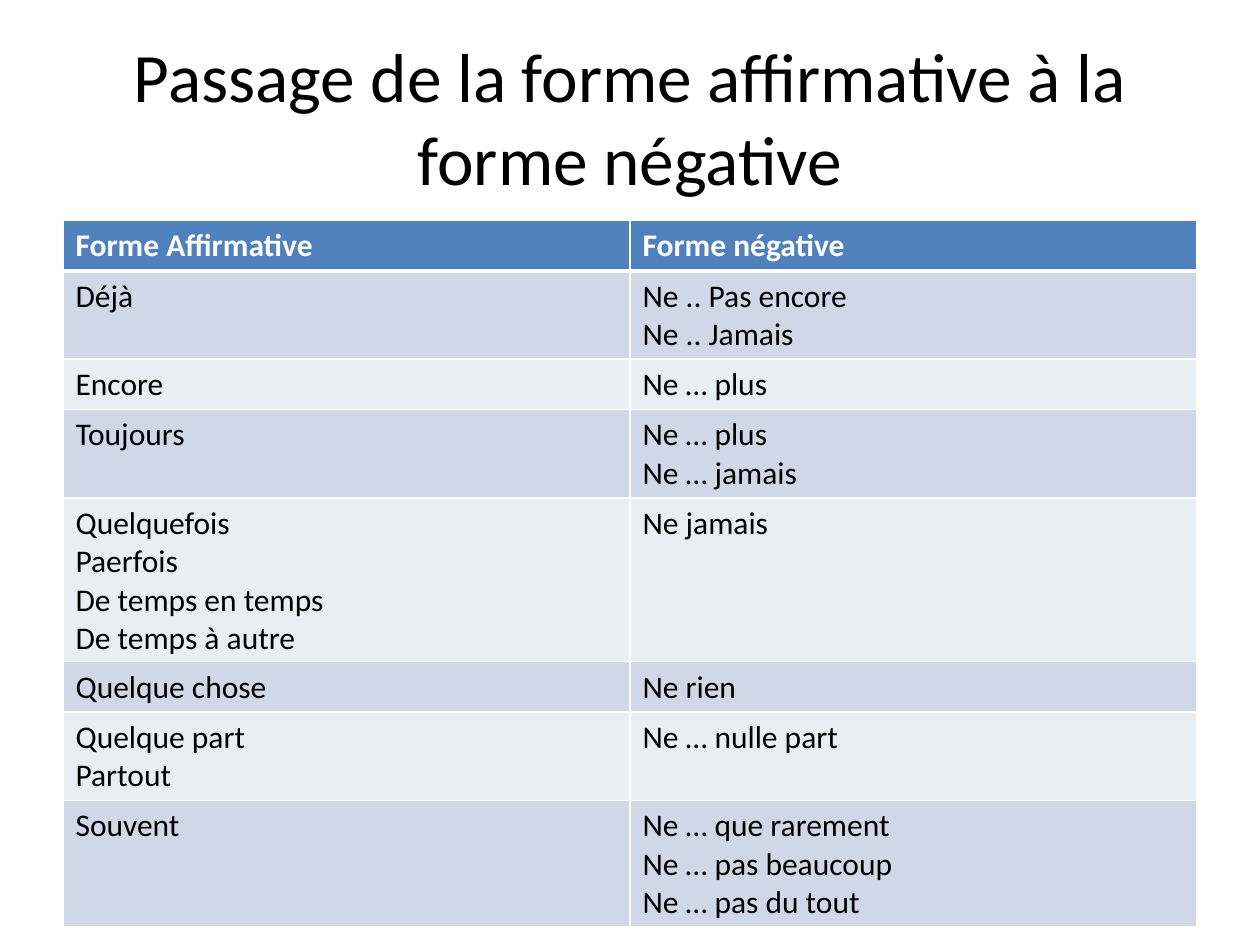
import dataclasses

import lxml.etree
import pptx
import pptx.dml.color
import pptx.enum.text
import pptx.oxml.ns
import pptx.util

PIXEL = 9144
ROWS = [
    (["Forme Affirmative"], ["Forme négative"]),
    (["Déjà"], ["Ne .. Pas encore", "Ne .. Jamais"]),
    (["Encore"], ["Ne … plus"]),
    (["Toujours"], ["Ne … plus", "Ne … jamais"]),
    (["Quelquefois", "Paerfois", "De temps en temps", "De temps à autre"], ["Ne jamais"]),
    (["Quelque chose"], ["Ne rien"]),
    (["Quelque part", "Partout"], ["Ne … nulle part"]),
    (["Souvent"], ["Ne … que rarement", "Ne … pas beaucoup", "Ne … pas du tout"]),
]


@dataclasses.dataclass(frozen=True)
class Theme:
    """Colours, type sizes and line widths of the deck."""

    font: str = "Calibri"
    title_size: float = 39.6
    table_size: float = 18
    ink: str = "000000"
    white: str = "FFFFFF"
    header: str = "4F81BD"
    bands: tuple = ("E9EDF4", "D0D8E8")
    thin_line: int = 1
    thick_line: int = 3


THEME = Theme()


def scale(*lengths):
    """Turn pixel lengths into EMU."""
    return [pptx.util.Emu(length * PIXEL) for length in lengths]


def write(frame, lines, *, size, color=THEME.ink, bold=False, align=pptx.enum.text.PP_ALIGN.LEFT):
    """Write each line as one formatted paragraph of a text frame."""
    for index, line in enumerate(lines):
        para = frame.add_paragraph() if index else frame.paragraphs[0]
        para.alignment = align
        span = para.add_run()
        span.text = line
        span.font.name = THEME.font
        span.font.size = pptx.util.Pt(size)
        span.font.bold = bold
        span.font.color.rgb = pptx.dml.color.RGBColor.from_string(color)


def draw_borders(cell, top, bottom):
    """Give a cell white borders, with its own top and bottom widths."""
    properties = cell._tc.get_or_add_tcPr()
    widths = {"L": THEME.thin_line, "R": THEME.thin_line, "T": top, "B": bottom}
    for position, (side, width) in enumerate(widths.items()):
        line = lxml.etree.Element(pptx.oxml.ns.qn(f"a:ln{side}"), w=str(pptx.util.Pt(width)))
        fill = lxml.etree.SubElement(line, pptx.oxml.ns.qn("a:solidFill"))
        lxml.etree.SubElement(fill, pptx.oxml.ns.qn("a:srgbClr"), val=THEME.white)
        properties.insert(position, line)


def add_title(page, left, top, width, height):
    """Place the centred slide title in the given box."""
    box = page.shapes.add_textbox(*scale(left, top, width, height))
    box.text_frame.word_wrap = True
    box.text_frame.vertical_anchor = pptx.enum.text.MSO_ANCHOR.MIDDLE
    write(
        box.text_frame,
        ["Passage de la forme affirmative à la forme négative"],
        size=THEME.title_size,
        align=pptx.enum.text.PP_ALIGN.CENTER,
    )


def add_forms_table(page, left, top, width, line_height, padding):
    """Place the table of forms, each row as tall as its longest cell."""
    heights = [line_height * max(map(len, row)) + padding for row in ROWS]
    area = scale(left, top, width, sum(heights))
    table = page.shapes.add_table(len(ROWS), len(ROWS[0]), *area).table
    for row_index, (row, height) in enumerate(zip(ROWS, heights)):
        is_header = row_index == 0
        table.rows[row_index].height = scale(height)[0]
        fill = THEME.header if is_header else THEME.bands[row_index % 2]
        above = THEME.thick_line if row_index == 1 else THEME.thin_line
        below = THEME.thick_line if is_header else THEME.thin_line
        for column_index, lines in enumerate(row):
            cell = table.cell(row_index, column_index)
            cell.fill.solid()
            cell.fill.fore_color.rgb = pptx.dml.color.RGBColor.from_string(fill)
            draw_borders(cell, above, below)
            write(
                cell.text_frame,
                lines,
                size=THEME.table_size,
                color=THEME.white if is_header else THEME.ink,
                bold=is_header,
            )


def main():
    """Build the deck and save it."""
    deck = pptx.Presentation()
    deck.slide_width, deck.slide_height = scale(1000, 750)
    page = deck.slides.add_slide(deck.slide_layouts[6])
    add_title(page, left=50, top=30, width=900, height=125)
    add_forms_table(page, left=50, top=175, width=900, line_height=30, padding=10)
    deck.save("out.pptx")


if __name__ == "__main__":
    main()
